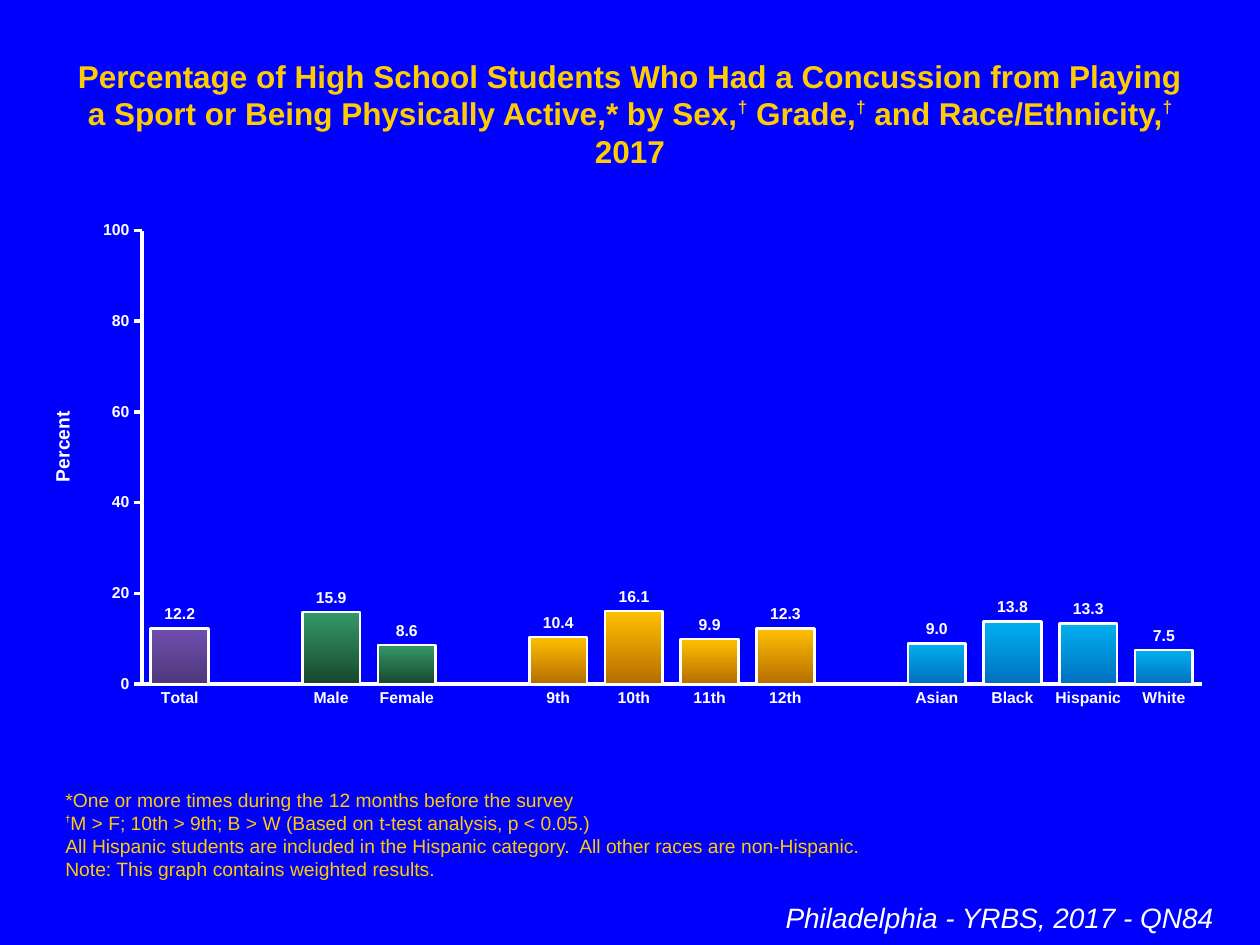
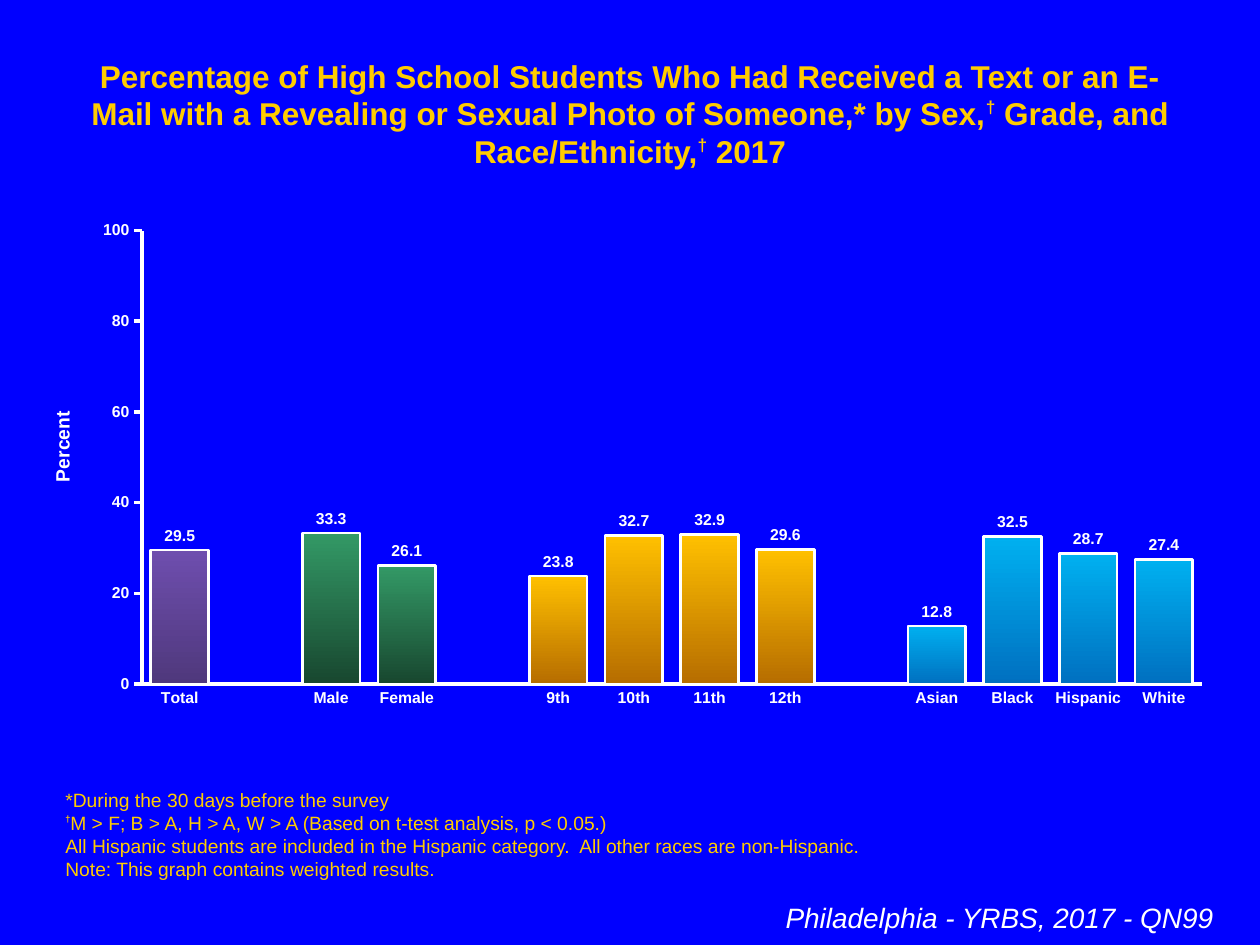
from collections import namedtuple

from lxml.etree import SubElement
from pptx import Presentation
from pptx.chart.data import CategoryChartData
from pptx.dml.color import RGBColor
from pptx.enum.chart import XL_CHART_TYPE, XL_LABEL_POSITION, XL_TICK_MARK
from pptx.enum.text import MSO_ANCHOR, MSO_AUTO_SIZE, PP_ALIGN
from pptx.oxml.ns import qn
from pptx.util import Inches, Pt

COLORS = {
    "background": "0000FF",
    "heading": "FFCC00",
    "white": "FFFFFF",
    "series": "26CA59",
}
FONT = "Arial"
DAGGER = "†"

# Page grid: 100 columns by 75 rows
COLUMN = ROW = Inches(0.1)
Box = namedtuple("Box", "column row columns rows")
TITLE_BOX = Box(5, 4, 90, 10)
CHART_BOX = Box(1.7, 16.7, 95.6, 40)
NOTES_BOX = Box(4.2, 62.1, 91.7, 8.3)
SOURCE_BOX = Box(3.3, 71, 94, 3.7)

# Shares of the chart's own size
PLOT_AREA = {"x": 0.1, "y": 0.04, "w": 0.88, "h": 0.9}
AXIS_TITLE_PLACE = {"x": 0.02, "y": 0.39}

# Bar groups: category labels, top colour, bottom colour
Group = namedtuple("Group", "labels top bottom")
GROUPS = [
    Group(["Total"], "6E4EAE", "4F387C"),
    Group(["Male", "Female"], "339966", "18472F"),
    Group(["9th", "10th", "11th", "12th"], "FFC000", "B66D00"),
    Group(["Asian", "Black", "Hispanic", "White"], "00B0F0", "0070C0"),
]

COMMON_NOTES = [
    "All Hispanic students are included in the Hispanic category.  All other races are non-Hispanic.",
    "Note: This graph contains weighted results.",
]
SURVEY_PAGES = [
    {
        "title": "Percentage of High School Students Who Had a Concussion from Playing "
                 "a Sport or Being Physically Active,* by Sex,† Grade,† and Race/Ethnicity,† 2017",
        "notes": ["*One or more times during the 12 months before the survey",
                  "†M > F; 10th > 9th; B > W (Based on t-test analysis, p < 0.05.)"],
        "question": "QN84",
        "values": [[12.2], [15.9, 8.6], [10.4, 16.1, 9.9, 12.3], [9.0, 13.8, 13.3, 7.5]],
    },
    {
        "title": "Percentage of High School Students Who Had Received a Text or an E-Mail "
                 "with a Revealing or Sexual Photo of Someone,* by Sex,† Grade, and Race/Ethnicity,† 2017",
        "notes": ["*During the 30 days before the survey",
                  "†M > F; B > A, H > A, W > A (Based on t-test analysis, p < 0.05.)"],
        "question": "QN99",
        "values": [[29.5], [33.3, 26.1], [23.8, 32.7, 32.9, 29.6], [12.8, 32.5, 28.7, 27.4]],
    },
]


def rgb(value):
    return RGBColor.from_string(COLORS.get(value, value))


def place(box):
    """Turn a grid box into left, top, width and height."""
    return (int(box.column * COLUMN), int(box.row * ROW),
            int(box.columns * COLUMN), int(box.rows * ROW))


def set_font(font, size, color="white", bold=False, italic=False):
    font.name, font.size = FONT, Pt(size)
    font.bold, font.italic = bold, italic
    font.color.rgb = rgb(color)


def add_text_frame(page, box, anchor=MSO_ANCHOR.TOP):
    frame = page.shapes.add_textbox(*place(box)).text_frame
    frame.word_wrap = True
    frame.auto_size = MSO_AUTO_SIZE.SHAPE_TO_FIT_TEXT
    frame.vertical_anchor = anchor
    return frame


def add_spans(para, text, size, bold, dagger_size, dagger_rise):
    """Write heading-coloured text with every dagger raised and bold."""
    for index, piece in enumerate(text.split(DAGGER)):
        if index:
            span = para.add_run()
            span.text = DAGGER
            set_font(span.font, dagger_size, "heading", bold=True)
            span._r.get_or_add_rPr().set("baseline", str(dagger_rise * 1000))
        if piece:
            span = para.add_run()
            span.text = piece
            set_font(span.font, size, "heading", bold=bold)


def add_title(page, box, text):
    para = add_text_frame(page, box).paragraphs[0]
    para.alignment = PP_ALIGN.CENTER
    add_spans(para, text, 18, True, 17, 40)


def add_notes(page, box, lines):
    frame = add_text_frame(page, box, MSO_ANCHOR.BOTTOM)
    for index, line in enumerate(lines):
        para = frame.add_paragraph() if index else frame.paragraphs[0]
        add_spans(para, line, 11, False, 9, 50)


def add_source(page, box, question):
    para = add_text_frame(page, box).paragraphs[0]
    para.text = f"Philadelphia - YRBS, 2017 - {question}"
    para.alignment = PP_ALIGN.RIGHT
    set_font(para.runs[0].font, 16, italic=True)


def set_layout(element, position, shares, inner=False):
    """Fix a chart part at the given shares of the chart."""
    for old_layout in element.findall(qn("c:layout")):
        element.remove(old_layout)
    layout = SubElement(element, qn("c:layout"))
    element.insert(position, layout)
    manual = SubElement(layout, qn("c:manualLayout"))
    if inner:
        SubElement(manual, qn("c:layoutTarget")).set("val", "inner")
    for side in ("x", "y"):
        SubElement(manual, qn(f"c:{side}Mode")).set("val", "edge")
    for side, share in shares.items():
        SubElement(manual, qn(f"c:{side}")).set("val", str(share))


def with_gaps(groups, filler):
    """Join the groups into one list with a filler between neighbours."""
    joined = []
    for index, group in enumerate(groups):
        joined += ([filler] if index else []) + list(group)
    return joined


def style_axes(chart):
    for axis in (chart.category_axis, chart.value_axis):
        axis.has_major_gridlines = False
        axis.minor_tick_mark = XL_TICK_MARK.NONE
        axis.format.line.color.rgb = rgb("white")
        axis.format.line.width = Pt(2)
        set_font(axis.tick_labels.font, 9, bold=True)
    chart.category_axis.major_tick_mark = XL_TICK_MARK.NONE

    scale = chart.value_axis
    scale.major_tick_mark = XL_TICK_MARK.OUTSIDE
    scale.minimum_scale, scale.maximum_scale, scale.major_unit = 0, 100, 20
    scale.tick_labels.number_format = "0"
    scale.tick_labels.number_format_is_linked = False
    para = scale.axis_title.text_frame.paragraphs[0]
    para.text = "Percent"
    set_font(para.runs[0].font, 11, bold=True)
    set_layout(scale.axis_title._element, 1, AXIS_TITLE_PLACE)


def style_bars(plot):
    plot.gap_width, plot.overlap = 31, 100
    plot.vary_by_categories = False
    series = plot.series[0]
    series.format.fill.solid()
    series.format.fill.fore_color.rgb = rgb("series")

    # One gradient for each group of bars
    bar_groups = with_gaps([[group] * len(group.labels) for group in GROUPS], None)
    for index, group in enumerate(bar_groups):
        if group is None:
            continue
        bar = series.points[index].format
        bar.fill.gradient()
        bar.fill.gradient_angle = 270
        for stop, color in zip(bar.fill.gradient_stops, (group.top, group.bottom)):
            stop.color.rgb = rgb(color)
        bar.line.color.rgb = rgb("white")
        bar.line.width = Pt(1.5)

    # Values above the bars
    plot.has_data_labels = True
    labels = plot.data_labels
    labels.show_value = True
    labels.number_format = "#,##0.0"
    labels.number_format_is_linked = False
    labels.position = XL_LABEL_POSITION.OUTSIDE_END
    set_font(labels.font, 9, bold=True)


def add_percent_chart(page, box, values):
    data = CategoryChartData()
    data.categories = with_gaps([group.labels for group in GROUPS], "")
    data.add_series("Series 1", with_gaps(values, None))
    chart = page.shapes.add_chart(XL_CHART_TYPE.COLUMN_CLUSTERED, *place(box), data).chart
    chart.has_legend = chart.has_title = False
    set_font(chart.font, 18)
    style_axes(chart)
    style_bars(chart.plots[0])
    set_layout(chart._chartSpace.chart.plotArea, 0, PLOT_AREA, inner=True)


def add_survey_page(deck, survey):
    page = deck.slides.add_slide(deck.slide_layouts[6])
    page.background.fill.solid()
    page.background.fill.fore_color.rgb = rgb("background")
    add_title(page, TITLE_BOX, survey["title"])
    add_notes(page, NOTES_BOX, survey["notes"] + COMMON_NOTES)
    add_source(page, SOURCE_BOX, survey["question"])
    add_percent_chart(page, CHART_BOX, survey["values"])


def main():
    deck = Presentation()
    deck.slide_width, deck.slide_height = 100 * COLUMN, 75 * ROW
    for survey in SURVEY_PAGES:
        add_survey_page(deck, survey)
    deck.save("out.pptx")


if __name__ == "__main__":
    main()
